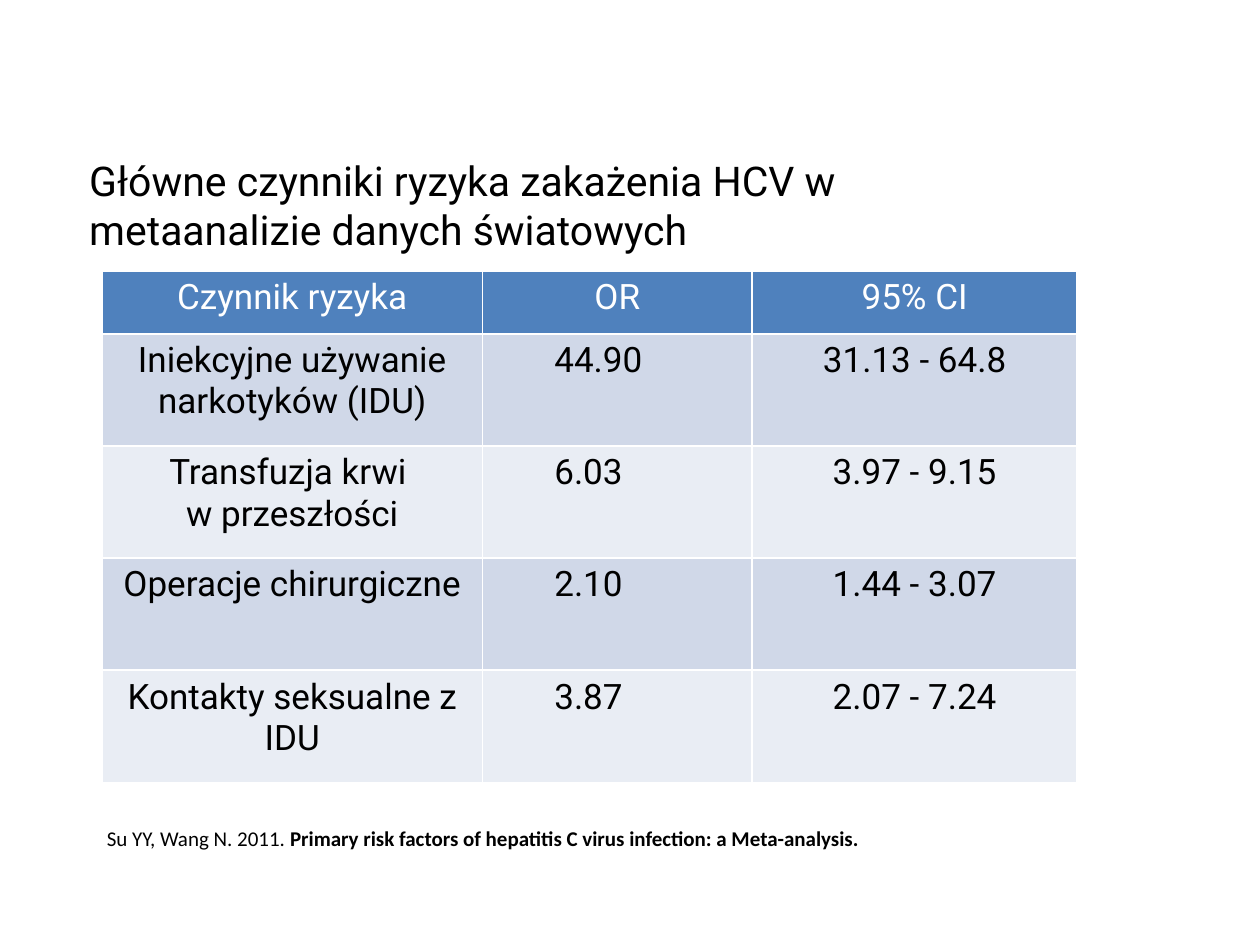
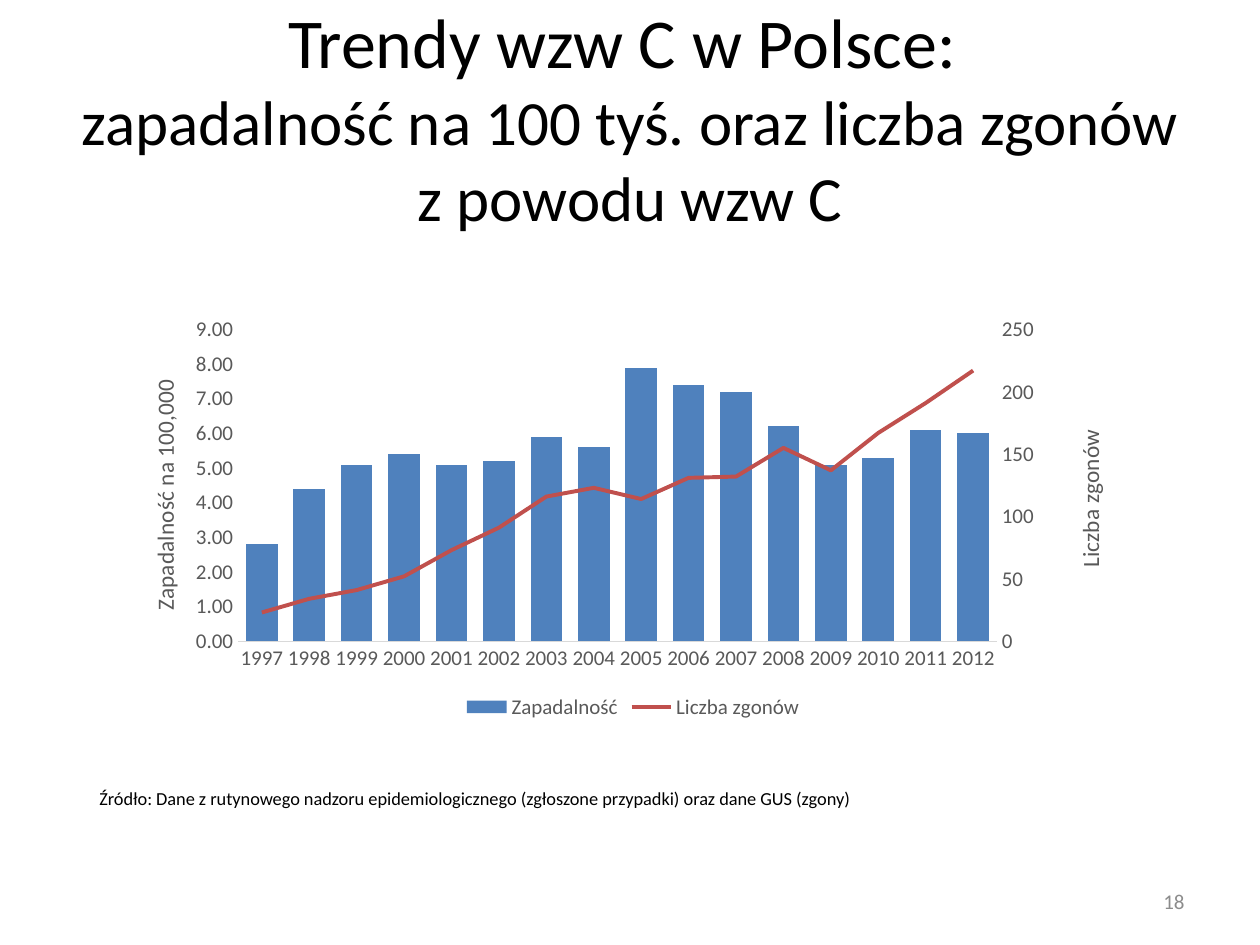
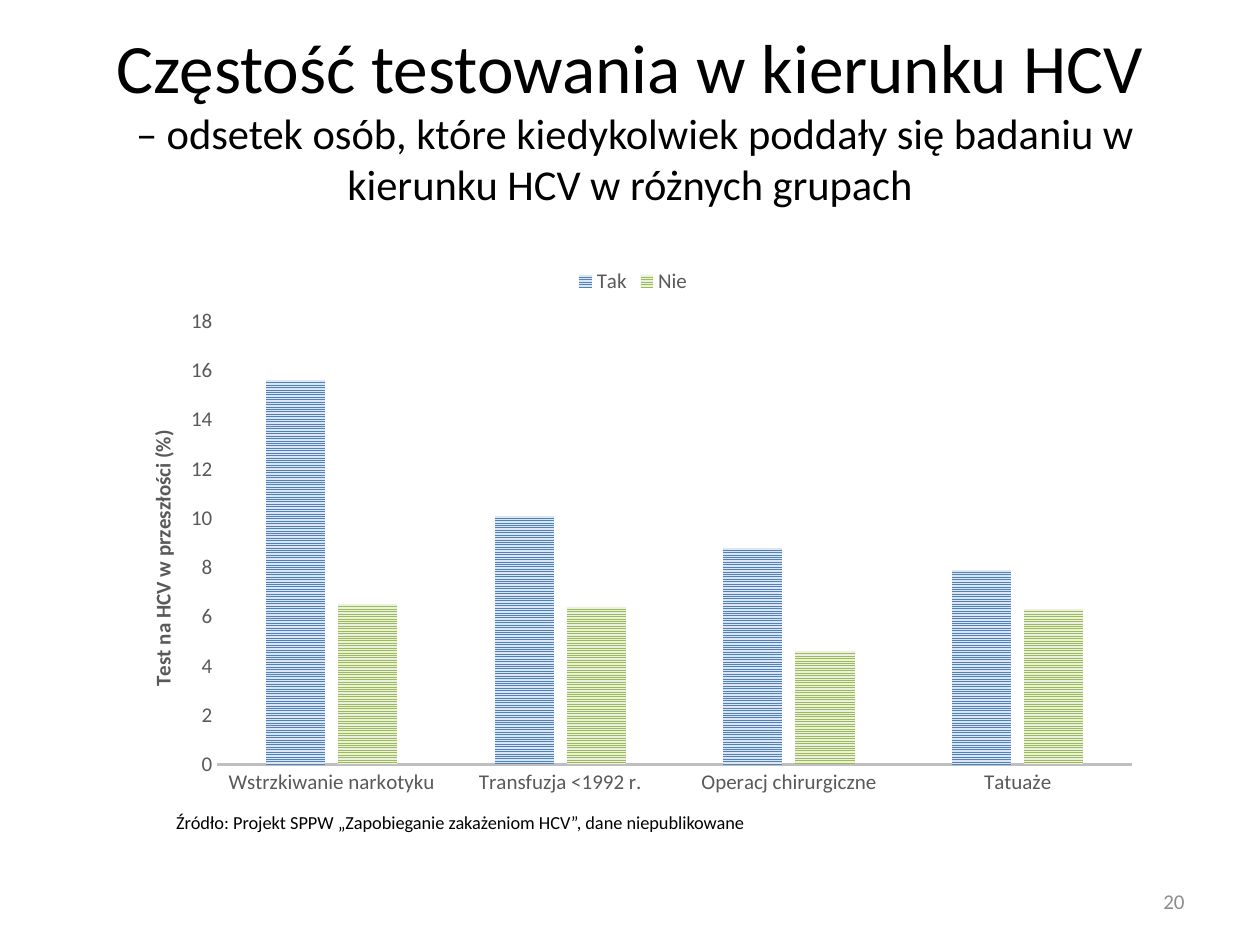
import copy

import lxml.etree
import pptx
import pptx.chart.axis
import pptx.chart.data
import pptx.dml.color
import pptx.enum.chart
import pptx.enum.dml
import pptx.enum.text
import pptx.oxml.ns
import pptx.oxml.xmlchemy
import pptx.util

Inches = pptx.util.Inches
Pt = pptx.util.Pt
qn = pptx.oxml.ns.qn
ALIGN = pptx.enum.text.PP_ALIGN
ANCHOR = pptx.enum.text.MSO_ANCHOR
LEGEND = pptx.enum.chart.XL_LEGEND_POSITION

COLORS = {
    "text": "000000",
    "white": "FFFFFF",
    "blue": "4F81BD",
    "red": "C0504D",
    "green": "9BBB59",
    "pale_blue": "DCE6F2",
    "pale_green": "EBF1DE",
    "band_dark": "D0D8E8",
    "band_light": "E9EDF4",
    "axis_text": "595959",
    "trend_axis": "D9D9D9",
    "test_axis": "BFBFBF",
    "page_number": "8C8C8C",
}
TITLE_BOX = (0.5, 0.3, 9, 1.25)
NUMBER_BOX = (7.17, 6.95, 2.33, 0.4)


def rgb(name):
    return pptx.dml.color.RGBColor.from_string(COLORS[name])


def style_font(font, size, color="text", face="Calibri", bold=False):
    font.size = Pt(size)
    font.name = face
    font.bold = bold
    font.color.rgb = rgb(color)


def write(tf, *runs, align=ALIGN.LEFT, anchor=ANCHOR.TOP, wrap=True, **fmt):
    tf.word_wrap = wrap
    tf.vertical_anchor = anchor
    p = tf.paragraphs[0]
    p.alignment = align
    for text, extra in runs:
        for i, line in enumerate(text.split("\n")):
            if i:
                p.add_line_break()
            if line:
                r = p.add_run()
                r.text = line
                style_font(r.font, **{**fmt, **extra})


def add_text(s, box, *runs, **fmt):
    sp = s.shapes.add_textbox(*map(Inches, box))
    write(sp.text_frame, *runs, **fmt)


def add_heading(s, heading, size, subheading, sub_size):
    add_text(s, TITLE_BOX, (heading + "\n", {}), (subheading, {"size": sub_size}),
             size=size, align=ALIGN.CENTER, anchor=ANCHOR.MIDDLE)


def add_source(s, box, text):
    add_text(s, box, (text, {}), size=10.5, wrap=False)


def add_page_number(s, number):
    add_text(s, NUMBER_BOX, (str(number), {}), size=12, color="page_number",
             align=ALIGN.RIGHT, anchor=ANCHOR.MIDDLE)


def set_borders(cell, color, width):
    props = cell._tc.get_or_add_tcPr()
    for i, side in enumerate(("lnL", "lnR", "lnT", "lnB")):
        ln = lxml.etree.Element(qn("a:" + side), w=str(Pt(width)))
        fill = lxml.etree.SubElement(ln, qn("a:solidFill"))
        lxml.etree.SubElement(fill, qn("a:srgbClr"), val=COLORS[color])
        props.insert(i, ln)


def add_risk_table(s, box, rows, widths, heights):
    table = s.shapes.add_table(len(rows), len(widths), *map(Inches, box)).table
    for col, width in zip(table.columns, widths):
        col.width = Inches(width)
    for row, height in zip(table.rows, heights):
        row.height = Inches(height)
    for i, values in enumerate(rows):
        fill = "blue" if i == 0 else ("band_light", "band_dark")[i % 2]
        for j, value in enumerate(values):
            cell = table.cell(i, j)
            cell.fill.solid()
            cell.fill.fore_color.rgb = rgb(fill)
            set_borders(cell, "white", 1)
            write(cell.text_frame, (value, {}), size=20, face="Roboto",
                  color="text" if i else "white", align=ALIGN.CENTER)


def place(parent, inner=False, **fractions):
    layout = parent.find(qn("c:layout"))
    if layout is None:
        layout = pptx.oxml.xmlchemy.OxmlElement("c:layout")
        parent.insert(0, layout)
    manual = lxml.etree.SubElement(layout, qn("c:manualLayout"))
    if inner:
        lxml.etree.SubElement(manual, qn("c:layoutTarget"), val="inner")
    for key in ("xMode", "yMode"):
        lxml.etree.SubElement(manual, qn("c:" + key), val="edge")
    for key, value in fractions.items():
        lxml.etree.SubElement(manual, qn("c:" + key), val=str(value))


def style_value_axis(axis, top, step, title, x, y, fmt="General", **font):
    axis.minimum_scale, axis.maximum_scale, axis.major_unit = 0, top, step
    axis.has_major_gridlines = False
    axis.major_tick_mark = pptx.enum.chart.XL_TICK_MARK.NONE
    axis.format.line.fill.background()
    style_font(axis.tick_labels.font, 12, "axis_text")
    axis.tick_labels.number_format = fmt
    axis.tick_labels.number_format_is_linked = False
    axis.has_title = False
    axis.has_title = True
    tf = axis.axis_title.text_frame
    write(tf, (title, {}), color="axis_text", align=ALIGN.CENTER, **font)
    body = tf._txBody.find(qn("a:bodyPr"))
    body.set("rot", "-5400000")
    body.set("vert", "horz")
    place(axis.axis_title._element, x=x, y=y)


def add_columns(s, box, categories, series, gap, overlap, legend, axis_line, plot_area):
    data = pptx.chart.data.CategoryChartData()
    data.categories = categories
    for name, values in series:
        data.add_series(name, values)
    chart = s.shapes.add_chart(pptx.enum.chart.XL_CHART_TYPE.COLUMN_CLUSTERED,
                               *map(Inches, box), data).chart
    chart.has_title = False
    style_font(chart.font, 10)
    chart.has_legend = True
    chart.legend.position = legend
    chart.legend.include_in_layout = False
    style_font(chart.legend.font, 12, "axis_text")
    plot = chart.plots[0]
    plot.gap_width, plot.overlap = gap, overlap
    plot.vary_by_categories = False
    axis = chart.category_axis
    axis.major_tick_mark = pptx.enum.chart.XL_TICK_MARK.NONE
    style_font(axis.tick_labels.font, 12, "axis_text")
    color, width = axis_line
    axis.format.line.color.rgb = rgb(color)
    axis.format.line.width = Pt(width)
    place(chart._chartSpace.chart.plotArea, inner=True, **plot_area)
    return chart


def move_last_series_to_right_axis(chart):
    area = chart._chartSpace.chart.plotArea
    bars = area.find(qn("c:barChart"))
    ser = bars.findall(qn("c:ser"))[-1]
    for flag in ser.findall(qn("c:invertIfNegative")):
        ser.remove(flag)
    lines = pptx.oxml.xmlchemy.OxmlElement("c:lineChart")
    lxml.etree.SubElement(lines, qn("c:grouping"), val="standard")
    lxml.etree.SubElement(lines, qn("c:varyColors"), val="0")
    lines.append(ser)
    lxml.etree.SubElement(lines, qn("c:marker"), val="1")
    bars.addnext(lines)
    cat, val = (area.find(qn("c:" + tag)) for tag in ("catAx", "valAx"))
    right_cat, right_val = copy.deepcopy(cat), copy.deepcopy(val)
    for axis, own, other in ((right_cat, "5001", "5002"), (right_val, "5002", "5001")):
        axis.find(qn("c:axId")).set("val", own)
        axis.find(qn("c:crossAx")).set("val", other)
        lxml.etree.SubElement(lines, qn("c:axId"), val=own)
    right_cat.find(qn("c:delete")).set("val", "1")
    right_val.find(qn("c:axPos")).set("val", "r")
    right_val.find(qn("c:crosses")).set("val", "max")
    val.addnext(right_val)
    right_val.addnext(right_cat)
    return pptx.chart.axis.ValueAxis(right_val)


def risk_slide(s):
    add_text(s, (0.61, 1.09, 6.32, 1.07),
             ("Główne czynniki ryzyka zakażenia HCV w metaanalizie danych światowych", {}),
             size=23.4, face="Roboto", anchor=ANCHOR.MIDDLE)
    rows = [
        ("Czynnik ryzyka", "OR", "95% CI"),
        ("Iniekcyjne używanie narkotyków (IDU)", "44.90 \t", "31.13 - 64.8"),
        ("Transfuzja krwi \nw przeszłości", "6.03 \t", "3.97 - 9.15"),
        ("Operacje chirurgiczne", "2.10 \t", "1.44 - 3.07"),
        ("Kontakty seksualne z IDU", "3.87 \t", "2.07 - 7.24"),
    ]
    add_risk_table(s, (0.81, 2.15, 7.74, 4.06), rows, (3.02, 2.14, 2.58), [0.5] + [0.89] * 4)
    add_text(s, (0.75, 6.5, 9.17, 0.3), ("Su YY, Wang N. 2011. ", {}),
             ("Primary risk factors of hepatitis C virus infection: a Meta-analysis.",
              {"bold": True}), size=12)


def trend_slide(s):
    add_heading(s, "Trendy wzw C w Polsce: ", 40,
                "zapadalność na 100 tyś. oraz liczba zgonów z powodu wzw C", 36)
    series = [
        ("Zapadalność", (2.8, 4.4, 5.1, 5.4, 5.1, 5.2, 5.9, 5.6,
                         7.9, 7.4, 7.2, 6.2, 5.1, 5.3, 6.1, 6)),
        ("Liczba zgonów", (23, 34, 41, 52, 73, 91, 116, 123,
                           114, 131, 132, 155, 137, 167, 191, 217)),
    ]
    chart = add_columns(s, (0.9, 2.45, 8.25, 3.3), [str(y) for y in range(1997, 2013)],
                        series, 50, -27, LEGEND.BOTTOM, ("trend_axis", 0.75),
                        {"x": 0.12, "y": 0.05, "w": 0.73, "h": 0.75})
    style_value_axis(chart.value_axis, 9, 1, "Zapadalność na 100,000", 0.03, 0.16,
                     fmt="0.00", size=13.3)
    right = move_last_series_to_right_axis(chart)
    style_value_axis(right, 250, 50, "Liczba zgonów", 0.92, 0.28, size=13.3)
    incidence, deaths = (plot.series[0] for plot in chart.plots)
    incidence.format.fill.solid()
    incidence.format.fill.fore_color.rgb = rgb("blue")
    deaths.smooth = False
    deaths.marker.style = pptx.enum.chart.XL_MARKER_STYLE.NONE
    deaths.format.line.color.rgb = rgb("red")
    deaths.format.line.width = Pt(2.25)
    add_page_number(s, 18)
    add_source(s, (0.69, 6.2, 6.26, 0.28),
               "Źródło: Dane z rutynowego nadzoru epidemiologicznego "
               "(zgłoszone przypadki) oraz dane GUS (zgony)")


def testing_slide(s):
    add_heading(s, "Częstość testowania w kierunku HCV", 39.6,
                " – odsetek osób, które kiedykolwiek poddały się badaniu "
                "w kierunku HCV w różnych grupach", 24.3)
    categories = ("Wstrzkiwanie narkotyku", "Transfuzja <1992 r.",
                  "Operacj chirurgiczne", "Tatuaże")
    series = [("Tak", (15.6, 10.1, 8.8, 7.9)), ("Nie", (6.5, 6.4, 4.6, 6.3))]
    chart = add_columns(s, (0.9, 2.02, 8.25, 4.4), categories, series, 164, -22,
                        LEGEND.TOP, ("test_axis", 1.5),
                        {"x": 0.1, "y": 0.12, "w": 0.88, "h": 0.8})
    style_value_axis(chart.value_axis, 18, 2, "Test na HCV w przeszłości (%)", 0.03, 0.31,
                     size=12, bold=True)
    stripes = (("blue", "pale_blue"), ("green", "pale_green"))
    for answer, (front, back) in zip(chart.plots[0].series, stripes):
        fill = answer.format.fill
        fill.patterned()
        fill.pattern = pptx.enum.dml.MSO_PATTERN.NARROW_HORIZONTAL
        fill.fore_color.rgb = rgb(front)
        fill.back_color.rgb = rgb(back)
    add_source(s, (1.3, 6.39, 4.81, 0.28),
               "Źródło: Projekt SPPW „Zapobieganie zakażeniom HCV”, dane niepublikowane")
    add_page_number(s, 20)


def main():
    prs = pptx.Presentation()
    prs.slide_width, prs.slide_height = Inches(10), Inches(7.5)
    for build in (risk_slide, trend_slide, testing_slide):
        build(prs.slides.add_slide(prs.slide_layouts[6]))
    prs.save("out.pptx")


if __name__ == "__main__":
    main()
